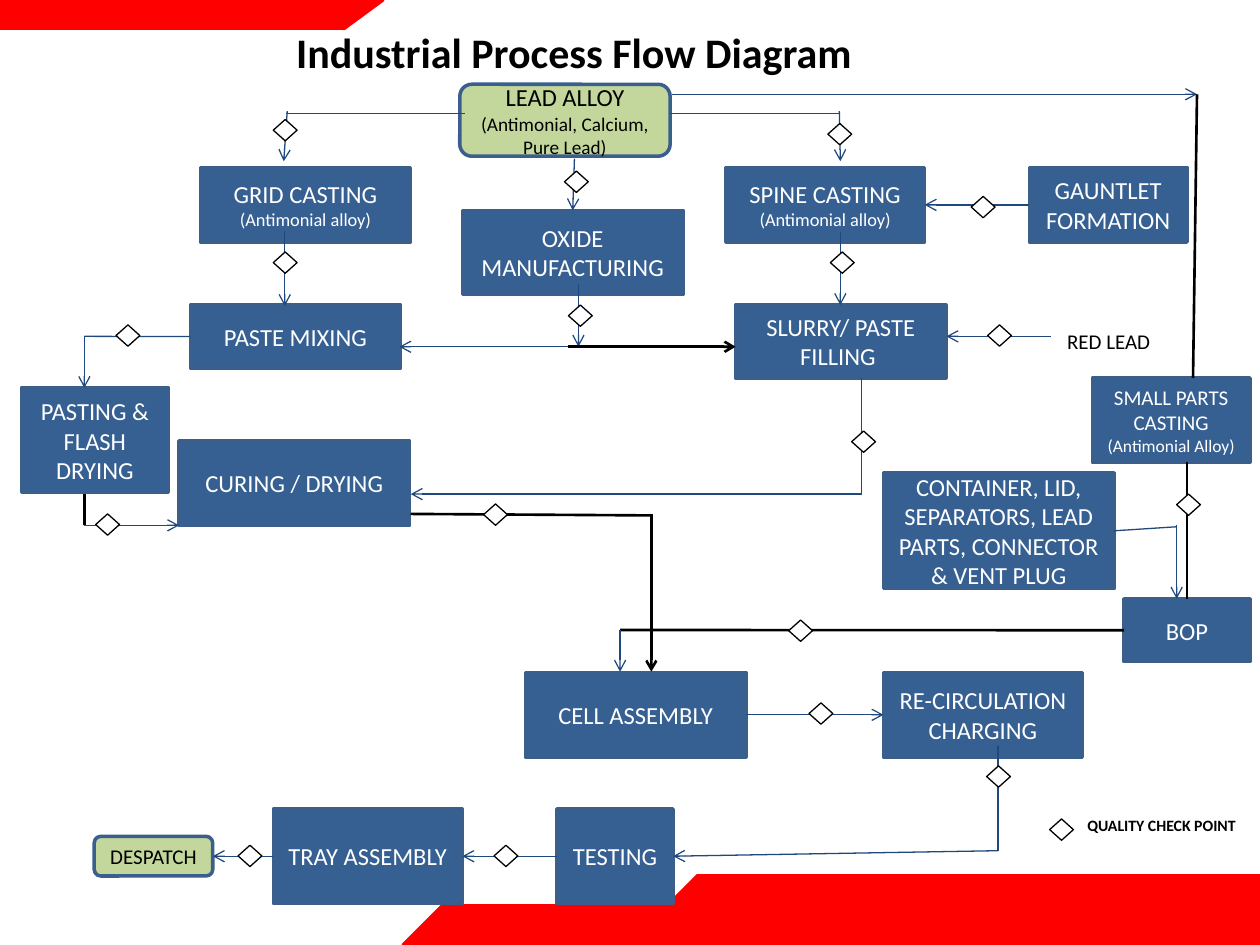
from typing import NamedTuple, Optional

from lxml import etree
from pptx import Presentation
from pptx.dml.color import RGBColor
from pptx.enum.shapes import MSO_CONNECTOR, MSO_SHAPE
from pptx.enum.text import MSO_ANCHOR, PP_ALIGN
from pptx.oxml.ns import qn
from pptx.util import Cm, Pt

RECT, ROUNDED = MSO_SHAPE.RECTANGLE, MSO_SHAPE.ROUNDED_RECTANGLE
TRIANGLE, DIAMOND = MSO_SHAPE.RIGHT_TRIANGLE, MSO_SHAPE.FLOWCHART_DECISION
STRAIGHT = MSO_CONNECTOR.STRAIGHT
LEFT, CENTER, MIDDLE = PP_ALIGN.LEFT, PP_ALIGN.CENTER, MSO_ANCHOR.MIDDLE

RED = RGBColor(0xFF, 0x00, 0x00)
BLUE = RGBColor(0x37, 0x60, 0x92)
BORDER = RGBColor(0x3A, 0x5F, 0x8C)
GREEN = RGBColor(0xC3, 0xD6, 0x9B)
NAVY = RGBColor(0x1F, 0x49, 0x7D)
BLACK = RGBColor(0x00, 0x00, 0x00)
WHITE = RGBColor(0xFF, 0xFF, 0xFF)

FONT = "Calibri"
TOP_SIDE, LEFT_SIDE, RIGHT_SIDE = 0, 1, 3
CHECK_WIDTH, CHECK_HEIGHT = 0.48, 0.43


class Area(NamedTuple):
    left: float
    top: float
    width: float
    height: float


class Step(NamedTuple):
    key: str
    area: Area
    label: str
    size: float = 14
    detail: str = ""
    detail_size: float = 10.5
    terminal: bool = False


class Point(NamedTuple):
    x: float
    y: float


class Joint(NamedTuple):
    key: str
    side: int


class Flow(NamedTuple):
    start: Point | Joint
    end: Point | Joint
    arrow: bool = True
    heavy: bool = False


class Band(NamedTuple):
    kind: int
    area: Area
    flip: Optional[str] = None


class Caption(NamedTuple):
    area: Area
    text: str
    size: float
    bold: bool = True
    align: int = LEFT


BANDS = [
    Band(RECT, Area(8.94, 18.26, 16.46, 0.79)),
    Band(TRIANGLE, Area(8.13, 18.26, 0.79, 0.79), "flipH"),
    Band(RECT, Area(14.1, 17.65, 11.3, 0.6)),
    Band(TRIANGLE, Area(13.28, 17.65, 0.79, 0.79), "flipH"),
    Band(RECT, Area(0, 0, 6.93, 0.58)),
    Band(TRIANGLE, Area(6.93, 0, 0.79, 0.58), "flipV"),
]

STEPS = [
    Step("lead", Area(9.27, 1.7, 4.24, 1.45), "LEAD ALLOY ",
         detail="(Antimonial, Calcium, Pure Lead)", detail_size=11, terminal=True),
    Step("grid", Area(4.04, 3.38, 4.24, 1.5), "GRID CASTING ", detail="(Antimonial alloy)"),
    Step("spine", Area(14.63, 3.38, 4.01, 1.5), "SPINE CASTING ", detail="(Antimonial alloy)"),
    Step("gauntlet", Area(20.75, 3.38, 3.18, 1.5), "GAUNTLET FORMATION"),
    Step("oxide", Area(9.32, 4.24, 4.45, 1.7), "OXIDE MANUFACTURING"),
    Step("mixing", Area(3.84, 6.15, 4.24, 1.27), "PASTE MIXING"),
    Step("slurry", Area(14.83, 6.15, 4.24, 1.47), "SLURRY/ PASTE FILLING "),
    Step("pasting", Area(0.43, 7.82, 2.97, 2.11), "PASTING & FLASH DRYING"),
    Step("curing", Area(3.61, 8.89, 4.65, 1.7), "CURING / DRYING"),
    Step("small parts", Area(22.02, 7.62, 3.18, 1.7), "SMALL PARTS CASTING ", 12,
         "(Antimonial Alloy)", 10),
    Step("container", Area(17.81, 9.53, 4.65, 2.34),
         "CONTAINER, LID, SEPARATORS, LEAD PARTS, CONNECTOR & VENT PLUG"),
    Step("bop", Area(22.66, 12.07, 2.54, 1.27), "BOP"),
    Step("cell", Area(10.59, 13.56, 4.45, 1.7), "CELL ASSEMBLY"),
    Step("charging", Area(17.81, 13.56, 4.01, 1.7), "RE-CIRCULATION CHARGING"),
    Step("testing", Area(11.23, 16.31, 2.34, 1.9), "TESTING"),
    Step("tray", Area(5.51, 16.31, 3.81, 1.9), "TRAY ASSEMBLY"),
    Step("despatch", Area(1.9, 16.86, 2.39, 0.8), "DESPATCH", 12, terminal=True),
]

FLOWS = [
    # Lead alloy to the castings and the oxide
    Flow(Point(9.37, 2.29), Point(5.77, 2.29), arrow=False),
    Flow(Point(5.79, 2.24), Point(5.72, 3.25)),
    Flow(Point(13.51, 2.29), Point(16.92, 2.29), arrow=False),
    Flow(Point(16.92, 2.24), Point(16.94, 3.25)),
    Flow(Point(11.58, 3.2), Joint("oxide", TOP_SIDE)),
    Flow(Point(13.54, 1.9), Point(24.13, 1.9)),
    Flow(Point(24.13, 1.9), Point(24.05, 7.62), arrow=False, heavy=True),
    # Castings and oxide to paste and slurry
    Flow(Point(5.74, 4.65), Point(5.74, 6.17)),
    Flow(Joint("gauntlet", LEFT_SIDE), Joint("spine", RIGHT_SIDE)),
    Flow(Point(16.94, 4.67), Point(16.94, 6.15)),
    Flow(Point(11.66, 5.72), Point(11.66, 6.99)),
    Flow(Point(11.66, 6.99), Point(8.05, 6.99)),
    Flow(Point(11.46, 6.99), Point(14.83, 6.99), heavy=True),
    Flow(Point(21.18, 6.78), Point(19.08, 6.78)),
    # Paste and slurry to curing
    Flow(Joint("mixing", LEFT_SIDE), Point(1.7, 6.78), arrow=False),
    Flow(Point(1.7, 6.78), Point(1.7, 7.82)),
    Flow(Point(1.7, 10.59), Point(1.7, 9.96), arrow=False, heavy=True),
    Flow(Point(1.7, 10.59), Point(3.61, 10.59)),
    Flow(Point(17.37, 9.96), Point(17.37, 7.62), arrow=False),
    Flow(Point(17.37, 9.96), Point(8.28, 9.96)),
    # Curing, small parts and containers to cell assembly
    Flow(Point(8.28, 10.36), Point(13.13, 10.39), arrow=False, heavy=True),
    Flow(Point(13.13, 10.36), Point(13.13, 13.54), heavy=True),
    Flow(Point(23.93, 9.32), Joint("bop", TOP_SIDE), arrow=False, heavy=True),
    Flow(Joint("container", RIGHT_SIDE), Point(23.72, 10.62), arrow=False),
    Flow(Point(23.72, 10.59), Point(23.72, 12.07)),
    Flow(Point(12.5, 12.7), Joint("bop", LEFT_SIDE), arrow=False, heavy=True),
    Flow(Point(12.5, 12.7), Point(12.5, 13.54)),
    # Charging, testing and despatch
    Flow(Joint("cell", RIGHT_SIDE), Joint("charging", LEFT_SIDE)),
    Flow(Point(20.12, 17.15), Point(20.12, 15.04), arrow=False),
    Flow(Point(20.12, 17.15), Joint("testing", RIGHT_SIDE)),
    Flow(Joint("testing", LEFT_SIDE), Joint("tray", RIGHT_SIDE)),
    Flow(Joint("tray", LEFT_SIDE), Joint("despatch", RIGHT_SIDE)),
]

# Top left corners; the last one belongs to the legend
CHECKS = [
    Point(5.51, 2.41), Point(16.69, 2.49), Point(11.38, 3.45), Point(19.58, 3.96),
    Point(5.51, 5.08), Point(16.74, 5.08), Point(11.46, 6.15), Point(2.34, 6.55),
    Point(19.91, 6.55), Point(17.17, 8.69), Point(23.72, 9.96), Point(9.75, 10.16),
    Point(1.93, 10.36), Point(15.9, 12.5), Point(16.31, 14.17), Point(19.89, 15.44),
    Point(9.96, 17.04), Point(4.8, 17.04), Point(21.16, 16.51),
]

CAPTIONS = [
    Caption(Area(5.72, 0.41, 12.24, 1.27), "Industrial Process Flow Diagram", 24),
    Caption(Area(21.18, 6.5, 2.34, 0.76), "RED LEAD", 12, False, CENTER),
    Caption(Area(21.67, 16.31, 3.53, 0.64), "QUALITY CHECK POINT", 9),
]


def add_outline(slide, kind: int, area: Area, fill: RGBColor, line: RGBColor, weight: float):
    shape = slide.shapes.add_shape(kind, *map(Cm, area))
    shape.shadow.inherit = False
    shape.fill.solid()
    shape.fill.fore_color.rgb = fill
    shape.line.color.rgb = line
    shape.line.width = Pt(weight)
    return shape


def add_run(paragraph, text: str, size: float, color: RGBColor, bold: bool = False) -> None:
    run = paragraph.add_run()
    run.text = text
    run.font.name, run.font.size, run.font.bold = FONT, Pt(size), bold
    run.font.color.rgb = color


def add_step(slide, step: Step):
    kind, fill, ink = (ROUNDED, GREEN, BLACK) if step.terminal else (RECT, BLUE, WHITE)
    box = add_outline(slide, kind, step.area, fill, BORDER, 2)
    box.text_frame.word_wrap = True
    box.text_frame.vertical_anchor = MIDDLE
    paragraph = box.text_frame.paragraphs[0]
    paragraph.alignment = CENTER
    add_run(paragraph, step.label, step.size, ink)
    if step.detail:
        add_run(paragraph, step.detail, step.detail_size, ink)
    return box


def add_flow(slide, flow: Flow, boxes: dict) -> None:
    ends = [Point(0, 0) if isinstance(end, Joint) else end for end in (flow.start, flow.end)]
    link = slide.shapes.add_connector(STRAIGHT, *map(Cm, ends[0] + ends[1]))
    if isinstance(flow.start, Joint):
        link.begin_connect(boxes[flow.start.key], flow.start.side)
    if isinstance(flow.end, Joint):
        link.end_connect(boxes[flow.end.key], flow.end.side)
    link.line.color.rgb = BLACK if flow.heavy else NAVY
    link.line.width = Pt(1.5 if flow.heavy else 0.75)
    if flow.arrow:
        etree.SubElement(link.line._get_or_add_ln(), qn("a:tailEnd"), type="arrow")
    etree.SubElement(link.element.spPr, qn("a:effectLst"))


def add_caption(slide, caption: Caption) -> None:
    frame = slide.shapes.add_textbox(*map(Cm, caption.area)).text_frame
    frame.word_wrap = True
    frame.paragraphs[0].alignment = caption.align
    add_run(frame.paragraphs[0], caption.text, caption.size, BLACK, caption.bold)


def main() -> None:
    deck = Presentation()
    deck.slide_width, deck.slide_height = Cm(25.4), Cm(19.05)
    slide = deck.slides.add_slide(deck.slide_layouts[6])

    # Red corner bands
    for band in BANDS:
        shape = add_outline(slide, band.kind, band.area, RED, RED, 2)
        if band.flip:
            shape.element.spPr.xfrm.set(band.flip, "1")

    # Process steps, flows and quality checks
    boxes = {step.key: add_step(slide, step) for step in STEPS}
    for flow in FLOWS:
        add_flow(slide, flow, boxes)
    for check in CHECKS:
        add_outline(slide, DIAMOND, Area(*check, CHECK_WIDTH, CHECK_HEIGHT), WHITE, BLACK, 0.75)

    # Title and labels
    for caption in CAPTIONS:
        add_caption(slide, caption)

    deck.save("out.pptx")


if __name__ == "__main__":
    main()
